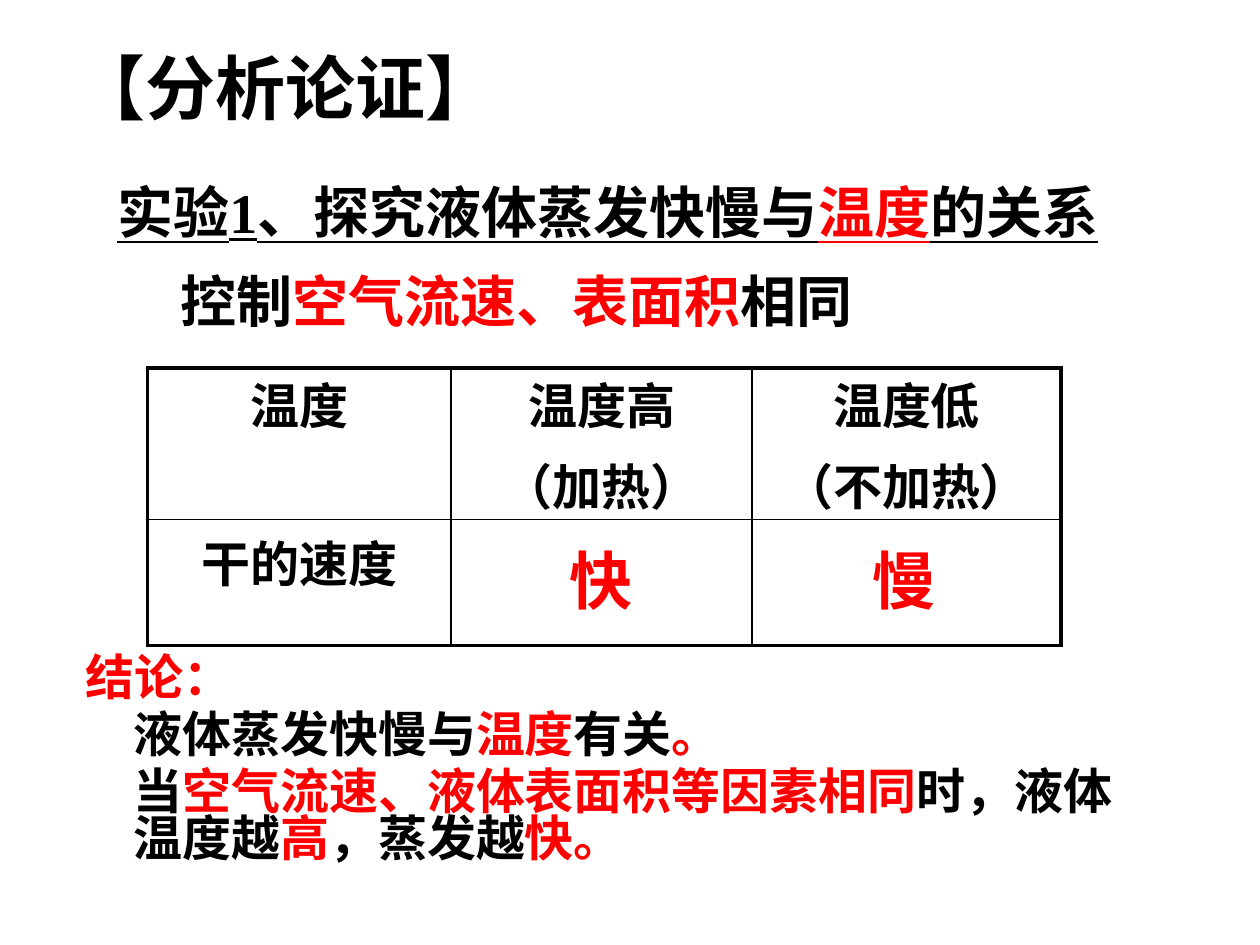
from pptx import Presentation
from pptx.dml.color import RGBColor
from pptx.enum.text import MSO_ANCHOR, MSO_AUTO_SIZE, PP_ALIGN
from pptx.oxml import parse_xml
from pptx.oxml.ns import nsdecls, qn
from pptx.util import Inches, Pt

COLORS = {"ink": "000000", "key": "FF0000"}
LATIN = "Times New Roman"
HAN = "Noto Sans CJK SC"


def write(paragraph, *runs, size=28, font=LATIN, underline=False, align=PP_ALIGN.LEFT,
          line=None, before=0, margin=0, indent=0):
    """Each run is a (wording, colour name) pair; before is a percentage."""
    paragraph.alignment = align
    paragraph.line_spacing = line
    paragraph.space_before = Pt(0)
    properties = paragraph._p.get_or_add_pPr()
    properties.set("marL", str(Inches(margin)))
    properties.set("indent", str(Inches(indent)))
    spacing = properties.find(qn("a:spcBef"))
    spacing.clear()
    spacing.append(parse_xml(f'<a:spcPct {nsdecls("a")} val="{before * 1000}"/>'))
    spacing.addnext(parse_xml(f'<a:buNone {nsdecls("a")}/>'))
    for wording, color in runs:
        run = paragraph.add_run()
        run.text = wording
        run.font.size = Pt(size)
        run.font.name = font
        run.font.bold = True
        run.font.underline = underline
        run.font.color.rgb = RGBColor.from_string(COLORS[color])
        run._r.get_or_add_rPr().append(
            parse_xml(f'<a:ea {nsdecls("a")} typeface="{HAN}"/>'))


class Lesson:
    def __init__(self, slide):
        self.slide = slide

    def fill_frame(self, frame, lines, **style):
        for index, (runs, extra) in enumerate(lines):
            paragraph = frame.add_paragraph() if index else frame.paragraphs[0]
            write(paragraph, *runs, **{**style, **extra})

    def placeholder(self, index, box, lines, anchor=MSO_ANCHOR.TOP, **style):
        holder = self.slide.placeholders[index]
        holder.left, holder.top, holder.width, holder.height = map(Inches, box)
        frame = holder.text_frame
        frame.auto_size = MSO_AUTO_SIZE.NONE
        frame.vertical_anchor = anchor
        self.fill_frame(frame, lines, **style)

    def answer(self, left, width, wording):
        frame = self.slide.shapes.add_textbox(
            Inches(left), Inches(4.25), Inches(width), Inches(0.7)).text_frame
        frame.word_wrap = True
        write(frame.paragraphs[0], (wording, "key"), size=36, before=50)

    def border(self, cell, side, width):
        cell._tc.get_or_add_tcPr().append(parse_xml(
            f'<a:ln{side} {nsdecls("a")} w="{Pt(width)}"><a:solidFill>'
            f'<a:srgbClr val="{COLORS["ink"]}"/></a:solidFill></a:ln{side}>'))

    def table(self, left, top, widths, heights, rows):
        grid = self.slide.shapes.add_table(
            len(heights), len(widths), Inches(left), Inches(top),
            Inches(sum(widths)), Inches(sum(heights))).table
        grid.first_row = grid.horz_banding = False
        for column, width in zip(grid.columns, widths):
            column.width = Inches(width)
        last_row, last_column = len(heights) - 1, len(widths) - 1
        for r, (height, labels) in enumerate(zip(heights, rows)):
            grid.rows[r].height = Inches(height)
            for c, label in enumerate(labels):
                cell = grid.cell(r, c)
                outer = {"L": c == 0, "R": c == last_column, "T": r == 0, "B": r == last_row}
                for side, is_outer in outer.items():
                    self.border(cell, side, 2.25 if is_outer else 1)
                cell.fill.background()
                if r == 0:
                    cell.margin_left = cell.margin_right = 0
                    cell.margin_top = cell.margin_bottom = 0
                lines = [([(wording, "ink")], {}) for wording in label]
                self.fill_frame(cell.text_frame, lines, font=HAN,
                                align=PP_ALIGN.CENTER, before=20)


def main():
    deck = Presentation()
    deck.slide_width, deck.slide_height = Inches(10), Inches(7.5)
    lesson = Lesson(deck.slides.add_slide(deck.slide_layouts[3]))

    lesson.placeholder(0, (0.5, 0.3, 5.08, 0.78), [([("【分析论证】", "ink")], {})],
                       anchor=MSO_ANCHOR.MIDDLE, size=40)
    lesson.placeholder(1, (0.83, 1.42, 8.83, 1.42), [
        ([("实验1、探究液体蒸发快慢与", "ink"), ("温度", "key"), ("的关系", "ink")],
         {"underline": True, "margin": 0.38, "indent": -0.38}),
        ([("控制", "ink"), ("空气流速、表面积", "key"), ("相同", "ink")],
         {"margin": 0.81, "indent": -0.31}),
    ], size=32, line=0.9, before=50)
    lesson.placeholder(2, (0.58, 5.17, 8.5, 1.83), [
        ([("结论：", "key")], {"indent": -0.38}),
        ([("液体蒸发快慢与", "ink"), ("温度", "key"), ("有关", "ink"), ("。", "key")], {}),
        ([("当", "ink"), ("空气流速、液体表面积等因素相同", "key"), ("时，液体温度越", "ink"),
          ("高", "key"), ("，蒸发越", "ink"), ("快。", "key")], {}),
    ], line=0.8, before=20, margin=0.38)
    lesson.table(1.17, 2.92, (2.41, 2.39, 2.45), (1.09, 1), [
        [["温度"], ["温度高", "（加热）"], ["温度低", "（不加热）"]],
        [["干的速度"], [], []],
    ])
    lesson.answer(4.42, 0.63, "快")
    lesson.answer(6.83, 0.9, "慢")
    deck.save("out.pptx")


if __name__ == "__main__":
    main()
